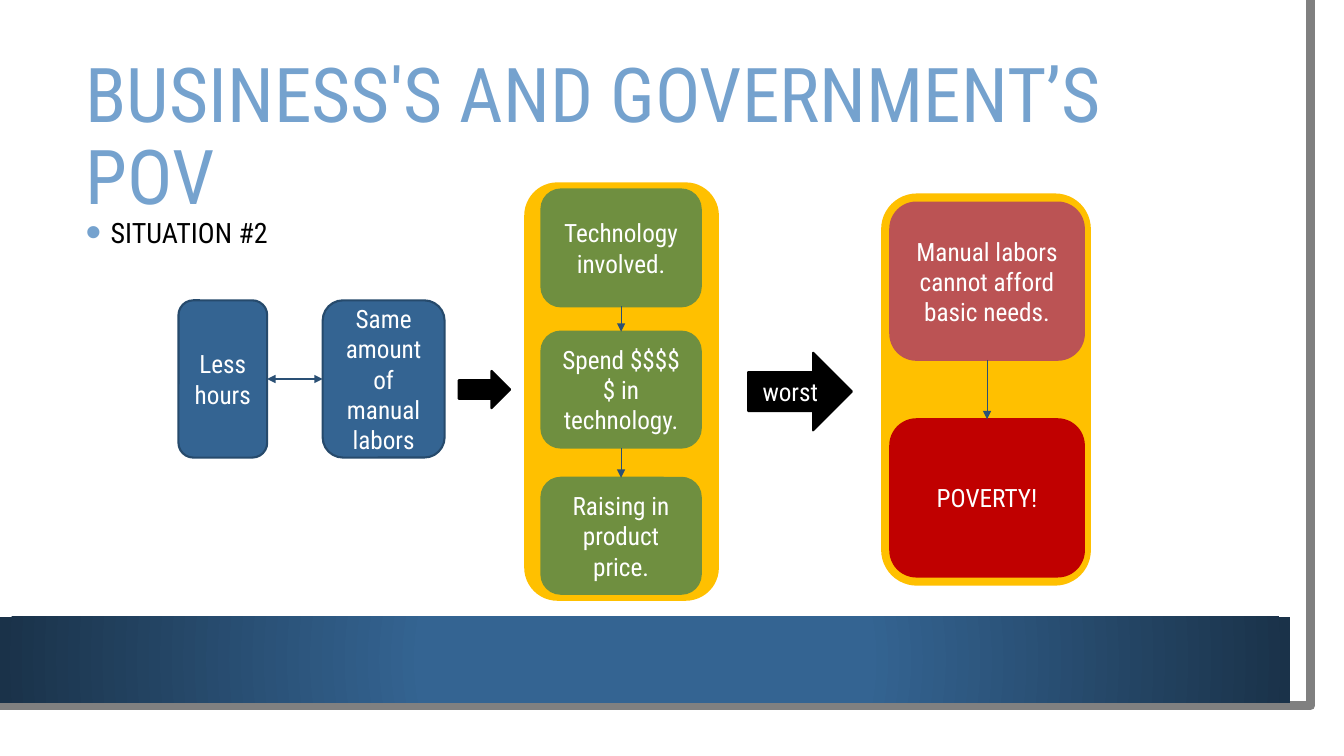
from itertools import pairwise

from lxml.etree import SubElement
from pptx import Presentation
from pptx.dml.color import RGBColor
from pptx.enum.shapes import MSO_CONNECTOR, MSO_SHAPE
from pptx.enum.text import MSO_ANCHOR, MSO_AUTO_SIZE, PP_ALIGN
from pptx.oxml import parse_xml
from pptx.oxml.ns import nsdecls, qn
from pptx.util import Inches, Pt

TOP, LEFT, BOTTOM, RIGHT = range(4)  # connection sites of a rounded box


def color(value):
    return RGBColor.from_string(value)


def apply(target, values):
    for name, value in values.items():
        setattr(target, name, value)


class SituationSlide:
    font = "Roboto Condensed"
    blue, light_blue, arrow_blue = "346492", "75A2CE", "2A5075"
    white, black, grey = "FFFFFF", "000000", "808080"

    def __init__(self, deck):
        self.page = deck.slides.add_slide(deck.slide_layouts[5])
        self.shapes = self.page.shapes

    def set_text(self, frame, text, size, text_color, align, **para_format):
        apply(frame, {"word_wrap": True, "auto_size": MSO_AUTO_SIZE.NONE,
                      "vertical_anchor": MSO_ANCHOR.MIDDLE})
        para = frame.paragraphs[0]
        apply(para, {"alignment": align, **para_format})
        span = para.add_run()
        span.text = text
        apply(span.font, {"name": self.font, "size": Pt(size)})
        span.font.color.rgb = color(text_color)
        return para

    def title(self, text, left, top, width, height):
        box = self.shapes.title
        apply(box, {"left": Inches(left), "top": Inches(top),
                    "width": Inches(width), "height": Inches(height)})
        self.set_text(box.text_frame, text, 54, self.light_blue, PP_ALIGN.LEFT, line_spacing=0.9)

    def bullet(self, text, left, top, width, height):
        box = self.shapes.add_textbox(*map(Inches, (left, top, width, height)))
        para = self.set_text(box.text_frame, text, 20, self.black, PP_ALIGN.LEFT)
        props = para._p.get_or_add_pPr()
        props.set("marL", str(Inches(0.25)))
        props.set("indent", str(-Inches(0.25)))
        bullet_color = SubElement(props, qn("a:buClr"))
        SubElement(bullet_color, qn("a:srgbClr"), val=self.light_blue)
        SubElement(props, qn("a:buSzPct"), val="160000")
        SubElement(props, qn("a:buFont"), typeface="Arial")
        SubElement(props, qn("a:buChar"), char="•")

    def box(self, left, top, width, height, fill, text="", line=None,
            kind=MSO_SHAPE.ROUNDED_RECTANGLE):
        box = self.shapes.add_shape(kind, *map(Inches, (left, top, width, height)))
        box.shadow.inherit = False
        box.fill.solid()
        box.fill.fore_color.rgb = color(fill)
        box.line.color.rgb = color(line or fill)
        box.line.width = Pt(1.5)
        if text:
            self.set_text(box.text_frame, text, 18, self.white, PP_ALIGN.CENTER)
        return box

    def block_arrow(self, left, top, width, height, text=""):
        return self.box(left, top, width, height, self.black, text, kind=MSO_SHAPE.RIGHT_ARROW)

    def link(self, start, start_site, end, end_site, ends=("tailEnd",)):
        link = self.shapes.add_connector(MSO_CONNECTOR.STRAIGHT, 0, 0, 0, 0)
        link.begin_connect(start, start_site)
        link.end_connect(end, end_site)
        link.line.color.rgb = color(self.arrow_blue)
        link.line.width = Pt(0.75)
        for end_name in ends:
            SubElement(link.line._ln, qn(f"a:{end_name}"), type="triangle")
        SubElement(link._element.spPr, qn("a:effectLst"))

    def column(self, frame, left, width, steps):
        """Yellow panel with linked boxes; a step is top, height, fill, text."""
        self.box(*frame, "FFC000")
        boxes = [self.box(left, top, width, height, fill, text)
                 for top, height, fill, text in steps]
        for upper, lower in pairwise(boxes):
            self.link(upper, BOTTOM, lower, TOP)

    def edge(self, start, *points):
        builder = self.shapes.build_freeform(*start, scale=Inches(1))
        builder.add_line_segments(points, close=False)
        edge = builder.convert_to_shape()
        edge.shadow.inherit = False
        edge.fill.background()
        edge.line.color.rgb = color(self.grey)
        edge.line.width = Pt(6.5)

    def band(self, left, top, width, height):
        band = self.box(left, top, width, height, self.blue, kind=MSO_SHAPE.RECTANGLE)
        band.line.fill.background()
        solid = band._element.spPr.find(qn("a:solidFill"))
        solid.getparent().replace(solid, parse_xml(
            f'<a:gradFill {nsdecls("a")}><a:gsLst>'
            f'<a:gs pos="34000"><a:srgbClr val="{self.blue}"/></a:gs>'
            '<a:gs pos="100000"><a:srgbClr val="1A3249"/></a:gs></a:gsLst>'
            '<a:path path="circle"><a:fillToRect l="50000" t="50000" r="50000" b="50000"/>'
            '</a:path></a:gradFill>'))


def main():
    deck = Presentation()
    apply(deck, {"slide_width": Inches(13.33), "slide_height": Inches(7.5)})
    slide = SituationSlide(deck)

    # Page edge and bottom band
    slide.edge((12.82, 0), (12.85, 7.02), (0, 7.01))
    slide.band(0, 6.12, 12.8, 0.85)

    # Heading
    slide.title("BUSINESS'S AND GOVERNMENT’S POV", 0.75, 0.75, 11.37, 1.26)
    slide.bullet("SITUATION #2", 0.75, 2.05, 4, 0.5)

    # Starting conditions
    hours, labors = [
        slide.box(left, 2.98, width, 1.56, slide.blue, text, line="264A6C")
        for left, width, text in ((1.77, 0.88, "Less hours"),
                                  (3.2, 1.21, "Same amount of manual labors"))]
    slide.link(hours, RIGHT, labors, LEFT, ends=("headEnd", "tailEnd"))
    slide.block_arrow(4.55, 3.68, 0.51, 0.37)

    # Technology column
    green = "6F8F40"
    slide.column((5.21, 1.82, 1.91, 4.13), 5.37, 1.58, [
        (1.88, 1.16, green, "Technology involved."),
        (3.29, 1.15, green, "Spend $$$$$ in technology."),
        (4.74, 1.15, green, "Raising in product price.")])
    slide.block_arrow(7.42, 3.5, 1.03, 0.77, "worst")

    # Poverty column
    slide.column((8.75, 1.93, 2.06, 3.87), 8.83, 1.92, [
        (2.01, 1.56, "BB5354", "Manual labors cannot afford basic needs."),
        (4.16, 1.56, "C00000", "POVERTY!")])

    deck.save("out.pptx")


if __name__ == "__main__":
    main()
